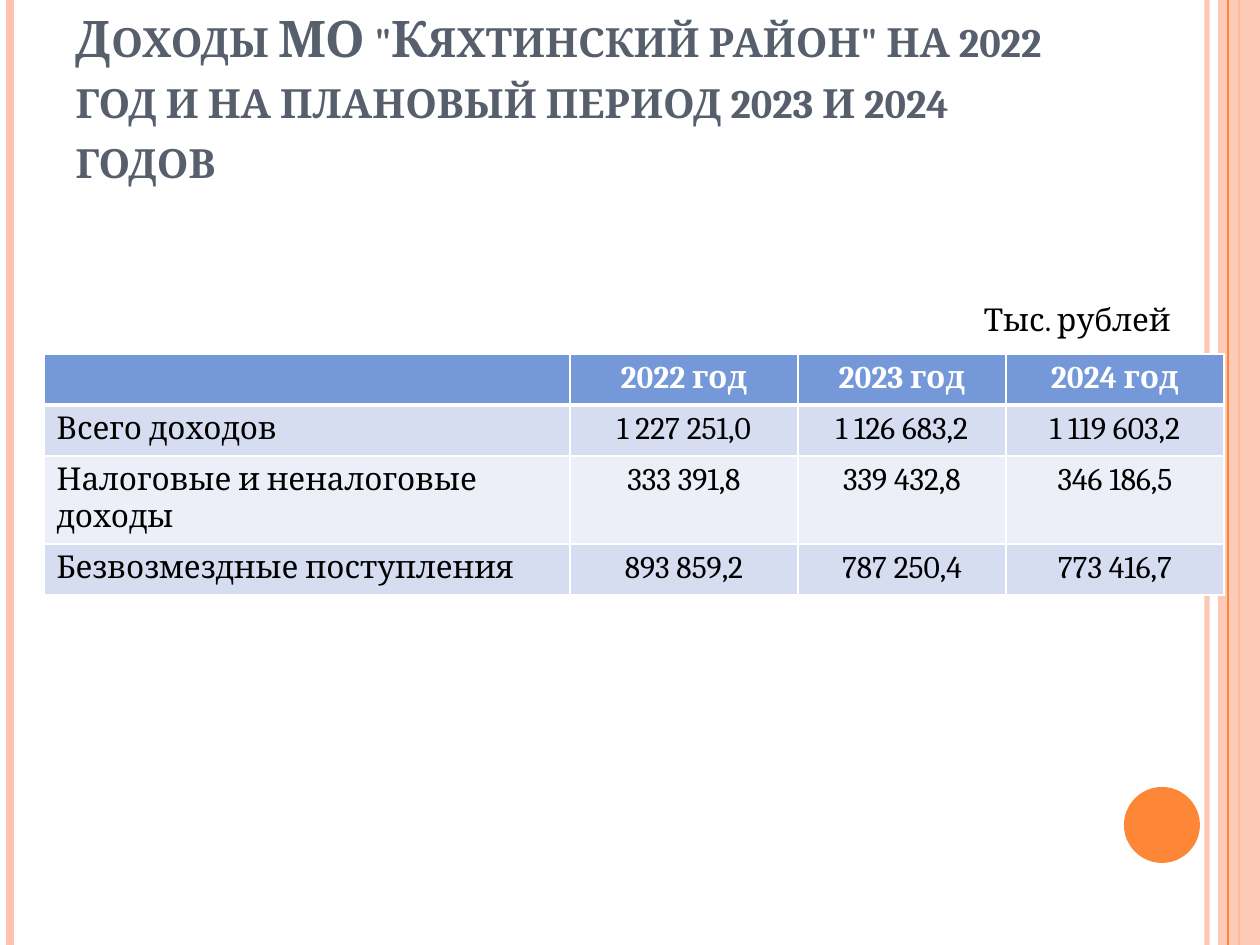
from lxml.etree import SubElement as Sub
from pptx import Presentation
from pptx.dml.color import RGBColor
from pptx.enum.shapes import MSO_CONNECTOR as Link, MSO_SHAPE as Kind
from pptx.enum.text import MSO_ANCHOR as Anchor, MSO_AUTO_SIZE as Fit, PP_ALIGN as Align
from pptx.oxml.ns import qn
from pptx.util import Emu, Pt

FONT = "Cambria"
PEACH, ORANGE = "FEC3AE", "FE8637"
HEAD, BANDS = "7598D9", ("D6DDF1", "ECEFF8")
COLS, ROWS = (526, 228, 208, 218), (51, 51, 88, 51)
DATA = (
    ("", "2022 год", "2023 год", "2024 год"),
    ("Всего доходов", "1 227 251,0", "1 126 683,2", "1 119 603,2"),
    ("Налоговые и неналоговые доходы", "333 391,8", "339 432,8", "346 186,5"),
    ("Безвозмездные поступления", "893 859,2", "787 250,4", "773 416,7"),
)


def px(n):
    """Turn pixels into EMU."""
    return Emu(round(n * 914400 / 126))


def paint(fill, color, alpha=100):
    """Fill with a hex colour at a given opacity."""
    fill.solid()
    fill.fore_color.rgb = RGBColor.from_string(color)
    if alpha < 100:
        tone = fill._xPr.find(qn("a:solidFill"))[0]
        Sub(tone, qn("a:alpha"), val=str(alpha * 1000))


def write(frame, text, size, color, align=Align.LEFT, bold=False):
    """Add one styled run to the first paragraph and return it."""
    para = frame.paragraphs[0]
    para.alignment = align
    run = para.add_run()
    run.text = text
    font = run.font
    font.name, font.size, font.bold = FONT, Pt(size), bold
    paint(font.fill, color)
    return run


def add_rule(slide, x, color, width, alpha=100):
    """Draw a full-height vertical line."""
    rule = slide.shapes.add_connector(Link.STRAIGHT, px(x), 0, px(x), px(945))
    rule.line.width = Pt(width)
    paint(rule.line.fill, color, alpha)
    Sub(rule._element.spPr, qn("a:effectLst"))


def add_shape(slide, kind, box, color, alpha=100):
    """Draw a plain filled shape."""
    shape = slide.shapes.add_shape(kind, *map(px, box))
    shape.shadow.inherit = False
    shape.line.fill.background()
    paint(shape.fill, color, alpha)


def add_title(slide, text):
    """Place and format the title."""
    title = slide.shapes.title
    title.left, title.top, title.width, title.height = map(px, (63, 38, 1029, 157))
    frame = title.text_frame
    frame.word_wrap, frame.auto_size = True, Fit.NONE
    frame.vertical_anchor = Anchor.BOTTOM
    run = write(frame, text, 28.8, "575F6D", bold=True)
    run.font._element.set("cap", "small")


def add_note(slide, text):
    """Add the right-aligned unit note."""
    frame = slide.shapes.add_textbox(*map(px, (848, 294, 335, 50))).text_frame
    frame.word_wrap = True
    write(frame, text, 18, "000000", Align.RIGHT)


def edge(cell, side, width):
    """Give a cell one white border."""
    props = cell._tc.get_or_add_tcPr()
    line = Sub(props, qn(f"a:ln{side}"), w=str(Pt(width)))
    Sub(Sub(line, qn("a:solidFill")), qn("a:srgbClr"), val="FFFFFF")


def add_grid(slide):
    """Build the income table."""
    box = map(px, (44, 354, sum(COLS), sum(ROWS)))
    table = slide.shapes.add_table(len(ROWS), len(COLS), *box).table
    for col, width in zip(table.columns, COLS):
        col.width = px(width)
    for r, (row, height) in enumerate(zip(table.rows, ROWS)):
        row.height = px(height)
        top = r == 0
        for c, cell in enumerate(row.cells):
            for side in "LRTB":
                thick = (top and side == "B") or (r == 1 and side == "T")
                edge(cell, side, 3 if thick else 1)
            paint(cell.fill, HEAD if top else BANDS[(r - 1) % 2])
            if DATA[r][c]:
                write(cell.text_frame, DATA[r][c], 18, "FFFFFF" if top else "000000",
                      Align.CENTER if c else Align.LEFT, top)


def main():
    """Build and save the slide."""
    deck = Presentation()
    deck.slide_width, deck.slide_height = px(1260), px(945)
    slide = deck.slides.add_slide(deck.slide_layouts[5])
    add_rule(slide, 1207, PEACH, 3, 93)
    add_rule(slide, 10, PEACH, 4.5)
    add_rule(slide, 1239, ORANGE, 1.5)
    add_shape(slide, Kind.RECTANGLE, (1218, 0, 42, 945), PEACH, 87)
    add_rule(slide, 1228, ORANGE, 0.75)
    add_shape(slide, Kind.OVAL, (1124, 787, 76, 76), ORANGE)
    add_title(slide, 'Доходы МО "Кяхтинский район" на 2022 год и на плановый период 2023 и 2024 годов')
    add_note(slide, "Тыс. рублей")
    add_grid(slide)
    deck.save("out.pptx")


if __name__ == "__main__":
    main()
